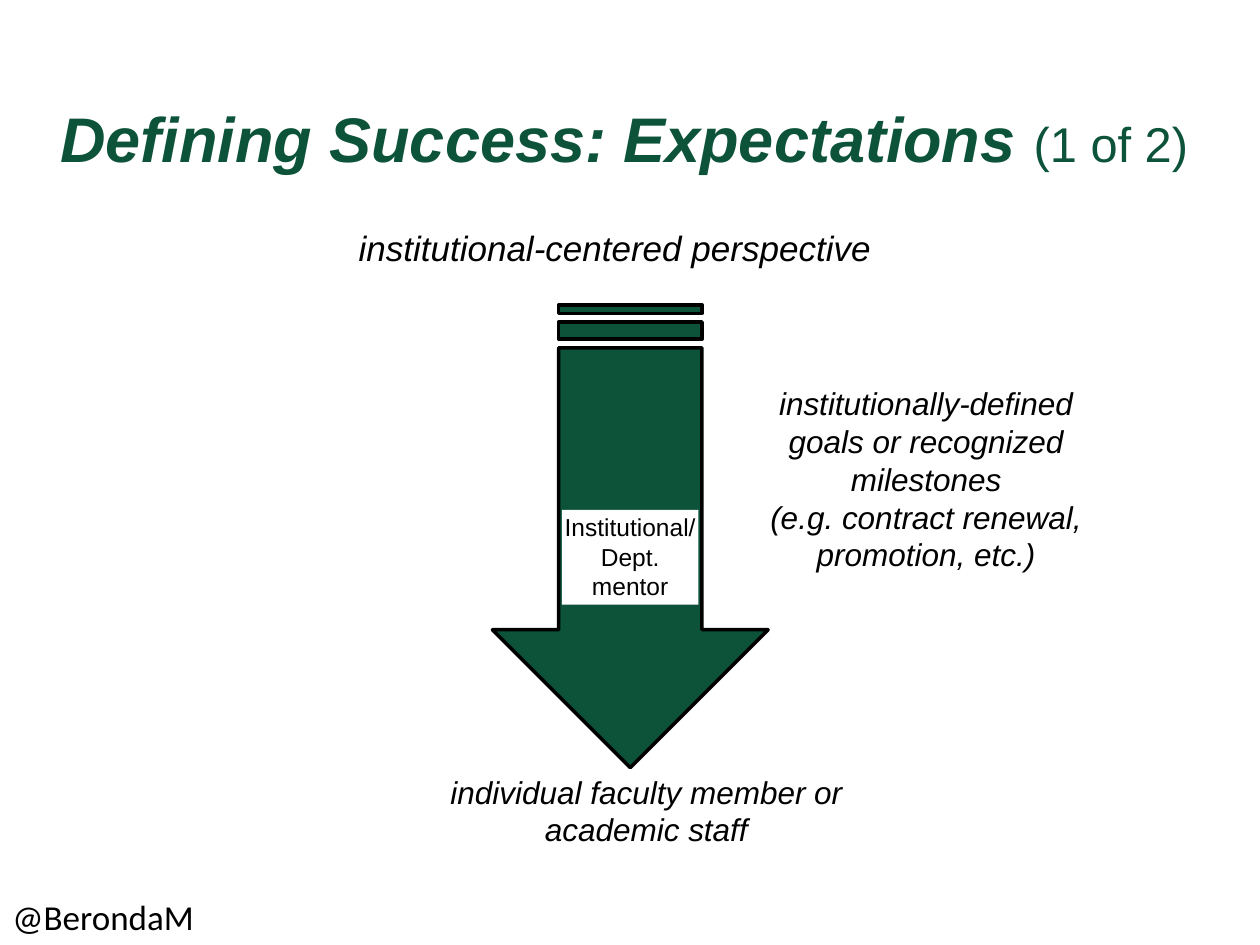
from dataclasses import dataclass

from pptx import Presentation
from pptx.dml.color import RGBColor
from pptx.enum.shapes import MSO_SHAPE
from pptx.enum.text import MSO_ANCHOR, PP_ALIGN
from pptx.util import Cm, Pt

LEFT, CENTER = PP_ALIGN.LEFT, PP_ALIGN.CENTER
TOP, BOTTOM = MSO_ANCHOR.TOP, MSO_ANCHOR.BOTTOM
RECTANGLE, STRIPED_ARROW = MSO_SHAPE.RECTANGLE, MSO_SHAPE.STRIPED_RIGHT_ARROW


@dataclass(frozen=True)
class Theme:
    green: RGBColor = RGBColor(0x0C, 0x53, 0x3A)
    black: RGBColor = RGBColor(0, 0, 0)
    white: RGBColor = RGBColor(255, 255, 255)
    font: str = "Arial"
    handle_font: str = "Calibri"
    title: float = 36
    counter: float = 27.9
    heading: float = 20
    body: float = 18
    label: float = 14


@dataclass(frozen=True)
class Box:
    """Position and size in centimetres."""
    left: float
    top: float
    width: float
    height: float

    def lengths(self) -> tuple:
        return Cm(self.left), Cm(self.top), Cm(self.width), Cm(self.height)


@dataclass(frozen=True)
class Caption:
    box: Box
    lines: tuple
    size: float
    align: PP_ALIGN = CENTER
    wrap: bool = True
    italic: bool = True
    font: str = Theme.font


THEME = Theme()

CAPTIONS = (
    Caption(Box(6.98, 4.45, 11.12, 1.11), ("institutional-centered perspective",),
            THEME.heading, align=LEFT, wrap=False),
    Caption(Box(14.86, 7.62, 7.62, 4.12),
            ("institutionally-defined goals or recognized milestones",
             "(e.g. contract renewal, promotion, etc.)"), THEME.body),
    Caption(Box(7.95, 15.45, 10.16, 1.8),
            ("individual faculty member or academic staff",), THEME.body),
    Caption(Box(0, 17.93, 4.22, 1.11), ("@BerondaM",), THEME.heading,
            align=LEFT, wrap=False, italic=False, font=THEME.handle_font),
)


def add_run(p, text: str, *, size: float, font: str = THEME.font,
            color: RGBColor = THEME.black, bold: bool = False,
            italic: bool = False) -> None:
    r = p.add_run()
    r.text = text
    r.font.name = font
    r.font.size = Pt(size)
    r.font.color.rgb = color
    r.font.bold = bold
    r.font.italic = italic


def write_lines(tf, lines: tuple, *, align: PP_ALIGN, wrap: bool = True,
                **run_format) -> None:
    tf.word_wrap = wrap
    tf.vertical_anchor = TOP
    for i, line in enumerate(lines):
        p = tf.paragraphs[0] if i == 0 else tf.add_paragraph()
        p.alignment = align
        add_run(p, line, **run_format)


def add_title(s) -> None:
    tf = s.shapes.add_textbox(*Box(0.97, 2.69, 24.43, 1.35).lengths()).text_frame
    tf.word_wrap = True
    tf.vertical_anchor = BOTTOM
    tf.margin_bottom = Cm(0.5)
    p = tf.paragraphs[0]
    add_run(p, "Defining Success: Expectations ", size=THEME.title,
            color=THEME.green, bold=True, italic=True)
    add_run(p, "(1 of 2)", size=THEME.counter, color=THEME.green)


def add_caption(s, caption: Caption) -> None:
    tf = s.shapes.add_textbox(*caption.box.lengths()).text_frame
    write_lines(tf, caption.lines, align=caption.align, wrap=caption.wrap,
                size=caption.size, font=caption.font, italic=caption.italic)


def add_filled(s, kind: MSO_SHAPE, box: Box, fill: RGBColor):
    sp = s.shapes.add_shape(kind, *box.lengths())
    sp.shadow.inherit = False
    sp.fill.solid()
    sp.fill.fore_color.rgb = fill
    return sp


def add_arrow(s) -> None:
    sp = add_filled(s, STRIPED_ARROW, Box(8.04, 8.03, 9.33, 5.56), THEME.green)
    sp.rotation = 90
    sp.adjustments[0] = 0.52
    sp.adjustments[1] = 0.5
    sp.line.color.rgb = THEME.black
    sp.line.width = Pt(2)


def add_mentor_label(s) -> None:
    sp = add_filled(s, RECTANGLE, Box(11.33, 10.28, 2.75, 1.91), THEME.white)
    sp.line.fill.background()
    tf = sp.text_frame
    tf.margin_left = tf.margin_right = tf.margin_top = tf.margin_bottom = Cm(0.05)
    write_lines(tf, ("Institutional/", "Dept. mentor"), align=CENTER,
                size=THEME.label)


def main() -> None:
    prs = Presentation()
    prs.slide_width, prs.slide_height = Cm(25.4), Cm(19.05)
    s = prs.slides.add_slide(prs.slide_layouts[6])

    # Title and captions
    add_title(s)
    for caption in CAPTIONS:
        add_caption(s, caption)

    # Arrow from institution to individual, with its label on top
    add_arrow(s)
    add_mentor_label(s)

    prs.save("out.pptx")


if __name__ == "__main__":
    main()
